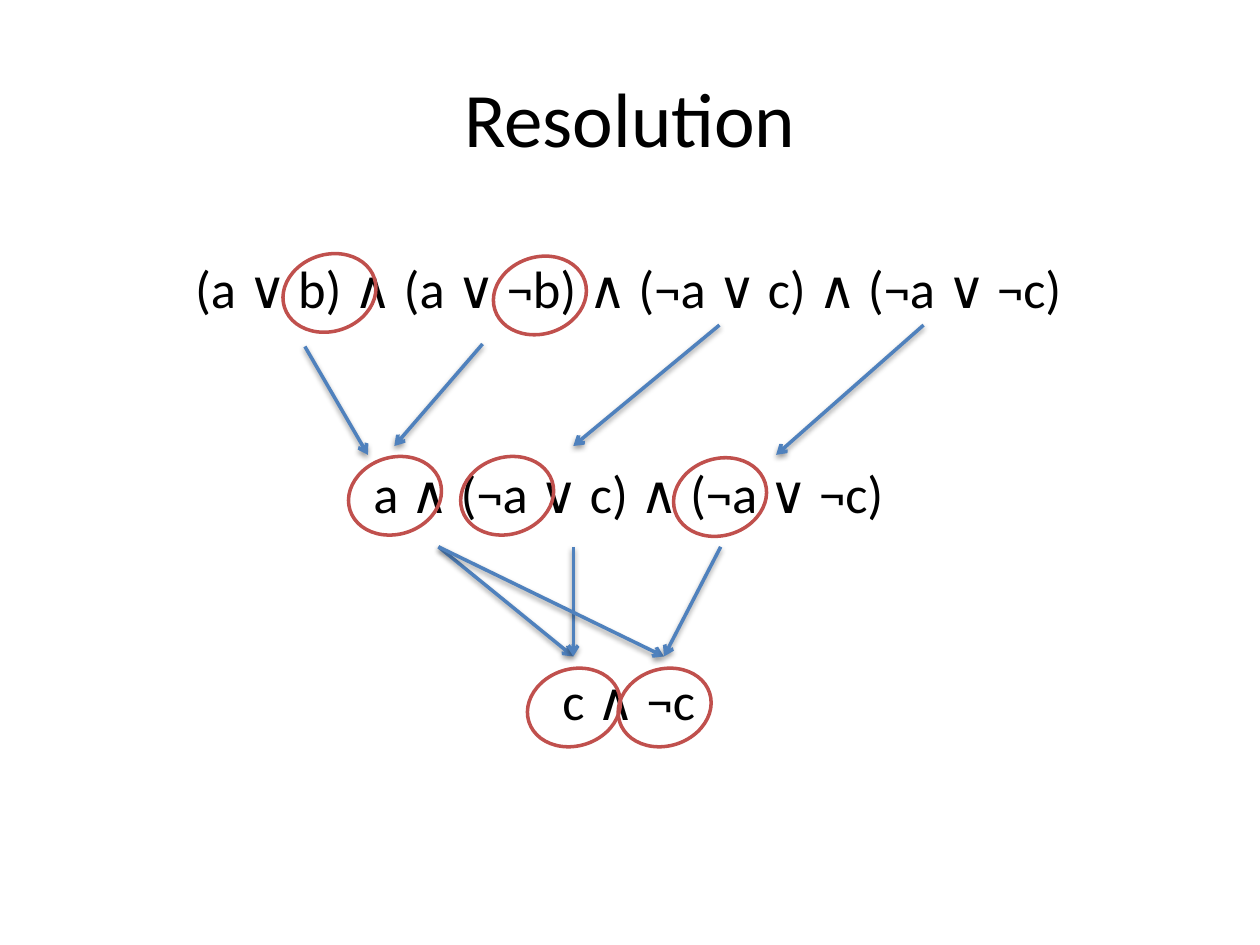
from lxml import etree
from pptx import Presentation
from pptx.dml.color import RGBColor
from pptx.enum.shapes import MSO_CONNECTOR, MSO_SHAPE
from pptx.enum.text import MSO_ANCHOR, PP_ALIGN
from pptx.oxml import parse_xml
from pptx.oxml.ns import qn
from pptx.util import Inches, Pt

STRAIGHT = MSO_CONNECTOR.STRAIGHT
ELLIPSE = MSO_SHAPE.OVAL
TOP, MIDDLE = MSO_ANCHOR.TOP, MSO_ANCHOR.MIDDLE
CENTER = PP_ALIGN.CENTER

COLORS = {"text": "000000", "ring": "C0504D", "arrow": "4F81BD"}
FONT = "Calibri"
SHADOW = (
    '<a:effectLst xmlns:a="http://schemas.openxmlformats.org/drawingml/2006/main">'
    '<a:outerShdw blurRad="40000" dist="20000" dir="5400000" rotWithShape="0">'
    '<a:srgbClr val="000000"><a:alpha val="38000"/></a:srgbClr>'
    "</a:outerShdw></a:effectLst>"
)

FORMULAS = [
    ("(a ∨ b) ∧ (a ∨ ¬b) ∧ (¬a ∨ c) ∧ (¬a ∨ ¬c)", 1.98, [(3.91, 2.04), (2.24, 2.02)]),
    ("a ∧ (¬a ∨ c) ∧ (¬a ∨ ¬c)", 3.61, [(2.76, 3.63), (3.65, 3.63), (5.34, 3.64)]),
    ("c ∧ ¬c", 5.25, [(4.18, 5.31), (4.9, 5.31)]),
]
ARROWS = [
    ((2.42, 2.75), (2.92, 3.61)),
    ((3.83, 2.73), (3.13, 3.54)),
    ((5.71, 2.58), (4.55, 3.54)),
    ((7.33, 2.58), (6.16, 3.61)),
    ((3.48, 4.34), (4.55, 5.21)),
    ((4.55, 4.34), (4.55, 5.21)),
    ((3.48, 4.34), (5.27, 5.21)),
    ((5.72, 4.34), (5.27, 5.21)),
]


def set_line(shape, color):
    """Give a shape or connector a 2 pt line."""
    shape.line.color.rgb = RGBColor.from_string(COLORS[color])
    shape.line.width = Pt(2)


def add_text(s, text, left, top, width, height, size, anchor=TOP):
    """Add one centred line of text."""
    tf = s.shapes.add_textbox(
        Inches(left), Inches(top), Inches(width), Inches(height)
    ).text_frame
    tf.word_wrap = True
    tf.vertical_anchor = anchor
    tf.text = text
    p = tf.paragraphs[0]
    p.alignment = CENTER
    font = p.runs[0].font
    font.name = FONT
    font.size = Pt(size)
    font.color.rgb = RGBColor.from_string(COLORS["text"])


def add_ring(s, left, top):
    """Add a tilted ellipse around a literal."""
    sp = s.shapes.add_shape(
        ELLIPSE, Inches(left), Inches(top), Inches(0.75), Inches(0.61)
    )
    sp.rotation = 342.3
    sp.shadow.inherit = False
    sp.fill.background()
    set_line(sp, "ring")


def add_arrow(s, start, end):
    """Add a shadowed arrow from a clause to its resolvent."""
    points = [Inches(v) for v in start + end]
    arrow = s.shapes.add_connector(STRAIGHT, *points)
    set_line(arrow, "arrow")
    etree.SubElement(arrow.line._get_or_add_ln(), qn("a:tailEnd"), type="arrow")
    arrow._element.spPr.append(parse_xml(SHADOW))


def main():
    """Build the resolution slide."""
    prs = Presentation()
    prs.slide_width, prs.slide_height = Inches(10), Inches(7.5)
    s = prs.slides.add_slide(prs.slide_layouts[6])
    add_text(s, "Resolution", 0.5, 0.3, 9, 1.25, 44, MIDDLE)
    for text, top, rings in FORMULAS:
        add_text(s, text, 0.7, top, 8.58, 0.61, 30)
        for left, ring_top in rings:
            add_ring(s, left, ring_top)
    for start, end in ARROWS:
        add_arrow(s, start, end)
    prs.save("out.pptx")


if __name__ == "__main__":
    main()
